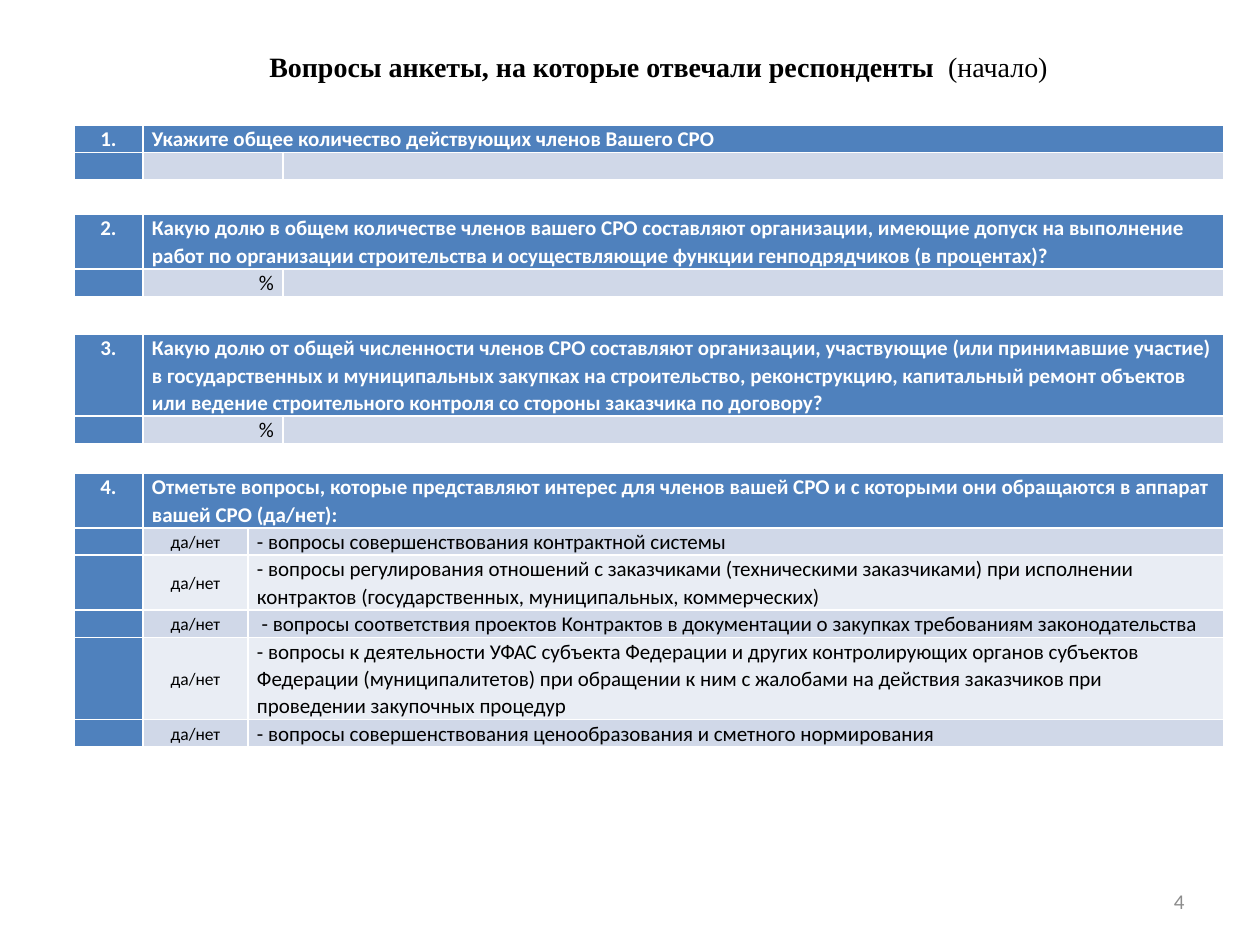
"""Build the slide listing the first four survey questions put to the respondents."""
from lxml.etree import SubElement
from pptx import Presentation
from pptx.dml.color import RGBColor
from pptx.enum.text import MSO_ANCHOR, PP_ALIGN
from pptx.oxml.ns import qn
from pptx.util import Pt

PX = 914400 / 126
BLACK = RGBColor(0x00, 0x00, 0x00)
WHITE = RGBColor(0xFF, 0xFF, 0xFF)
GRAY = RGBColor(0x8C, 0x8C, 0x8C)
BLUE = RGBColor(0x4F, 0x81, 0xBD)
BANDS = RGBColor(0xD0, 0xD8, 0xE8), RGBColor(0xE9, 0xED, 0xF4)

TITLE = [("Вопросы анкеты, на которые отвечали респонденты  ", True), ("(начало)", False)]
TITLE_BOX = 123, 37, 1071, 59
PAGE_NUMBER = "4"
PAGE_NUMBER_BOX = 903, 876, 294, 50
LEFT, WIDTH, NUMBER_WIDTH, LINE, MARGIN = 74, 1150, 69, 27, 9

QUESTIONS = [
    dict(top=125, lines=1, answer_width=140, answers=[("", "", 1)],
         question="Укажите общее количество действующих членов Вашего СРО"),
    dict(top=214, lines=2, answer_width=140, answers=[("%", "", 1)],
         question="Какую долю в общем количестве членов вашего СРО составляют организации, "
                  "имеющие допуск на выполнение работ по организации строительства и "
                  "осуществляющие функции генподрядчиков (в процентах)?"),
    dict(top=334, lines=3, answer_width=140, answers=[("%", "", 1)],
         question="Какую долю от общей численности членов СРО составляют организации, "
                  "участвующие (или принимавшие участие) в государственных и муниципальных "
                  "закупках на строительство, реконструкцию, капитальный ремонт объектов или "
                  "ведение строительного контроля со стороны заказчика по договору?"),
    dict(top=473, lines=2, answer_width=105,
         question="Отметьте вопросы, которые представляют интерес для членов вашей СРО и с "
                  "которыми они обращаются в аппарат вашей СРО (да/нет):",
         answers=[
             ("да/нет", "- вопросы совершенствования контрактной системы", 1),
             ("да/нет", "- вопросы регулирования отношений с заказчиками (техническими "
                        "заказчиками) при исполнении контрактов (государственных, "
                        "муниципальных, коммерческих)", 2),
             ("да/нет", " - вопросы соответствия проектов Контрактов в документации о "
                        "закупках требованиям законодательства", 1),
             ("да/нет", "- вопросы к деятельности УФАС субъекта Федерации и других "
                        "контролирующих органов субъектов Федерации (муниципалитетов) при "
                        "обращении к ним с жалобами на действия заказчиков при проведении "
                        "закупочных процедур", 3),
             ("да/нет", "- вопросы совершенствования ценообразования и сметного "
                        "нормирования", 1),
         ]),
]
ANSWER_FORMATS = {
    "": {},
    "%": dict(align=PP_ALIGN.RIGHT),
    "да/нет": dict(align=PP_ALIGN.CENTER, size=10, anchor=MSO_ANCHOR.MIDDLE),
}


def px(length):
    return round(length * PX)


def add_run(paragraph, text, color, size=12, bold=False, name="Calibri"):
    run = paragraph.add_run()
    run.text = text
    for attribute, value in dict(size=Pt(size), bold=bold, name=name).items():
        setattr(run.font, attribute, value)
    run.font.color.rgb = color


def fill_cell(cell, text, fill, color=BLACK, size=12, bold=False,
              align=PP_ALIGN.LEFT, anchor=MSO_ANCHOR.TOP):
    cell.fill.solid()
    cell.fill.fore_color.rgb = fill
    layout = dict(margin_left=px(MARGIN), margin_right=px(MARGIN),
                  margin_top=0, margin_bottom=0, vertical_anchor=anchor)
    for attribute, value in layout.items():
        setattr(cell, attribute, value)
    paragraph = cell.text_frame.paragraphs[0]
    paragraph.alignment = align
    paragraph.line_spacing = 1.07
    if text:
        add_run(paragraph, text, color, size, bold)
    else:
        SubElement(paragraph._p, qn("a:endParaRPr"), sz=str(size * 100))


def add_question(slide, number, top, lines, answer_width, question, answers):
    heights = [LINE * count for count in (lines, *(answer[2] for answer in answers))]
    table = slide.shapes.add_table(len(heights), 3, px(LEFT), px(top),
                                   px(WIDTH), px(sum(heights))).table
    table.first_col = True
    widths = NUMBER_WIDTH, answer_width, WIDTH - NUMBER_WIDTH - answer_width
    for column, width in zip(table.columns, widths):
        column.width = px(width)
    for row, height in zip(table.rows, heights):
        row.height = px(height)

    table.cell(0, 1).merge(table.cell(0, 2))
    heading = dict(fill=BLUE, color=WHITE, bold=True)
    fill_cell(table.cell(0, 0), f"{number}.", align=PP_ALIGN.CENTER, **heading)
    fill_cell(table.cell(0, 1), question, **heading)
    for index, (answer, topic, _) in enumerate(answers):
        number_cell, answer_cell, topic_cell = table.rows[index + 1].cells
        band = BANDS[index % 2]
        fill_cell(number_cell, "", BLUE)
        fill_cell(answer_cell, answer, band, **ANSWER_FORMATS[answer])
        fill_cell(topic_cell, topic, band)


def main():
    presentation = Presentation()
    presentation.slide_width, presentation.slide_height = px(1260), px(945)
    slide = presentation.slides.add_slide(presentation.slide_layouts[5])

    title = slide.shapes.title
    title.left, title.top, title.width, title.height = map(px, TITLE_BOX)
    title.text_frame.vertical_anchor = MSO_ANCHOR.MIDDLE
    heading = title.text_frame.paragraphs[0]
    heading.alignment = PP_ALIGN.CENTER
    for text, bold in TITLE:
        add_run(heading, text, BLACK, 16, bold, "Times New Roman")

    for number, content in enumerate(QUESTIONS, 1):
        add_question(slide, number, **content)

    footer = slide.shapes.add_textbox(*map(px, PAGE_NUMBER_BOX)).text_frame
    footer.word_wrap = True
    footer.vertical_anchor = MSO_ANCHOR.MIDDLE
    footer.paragraphs[0].alignment = PP_ALIGN.RIGHT
    add_run(footer.paragraphs[0], PAGE_NUMBER, GRAY)

    presentation.save("out.pptx")


if __name__ == "__main__":
    main()
